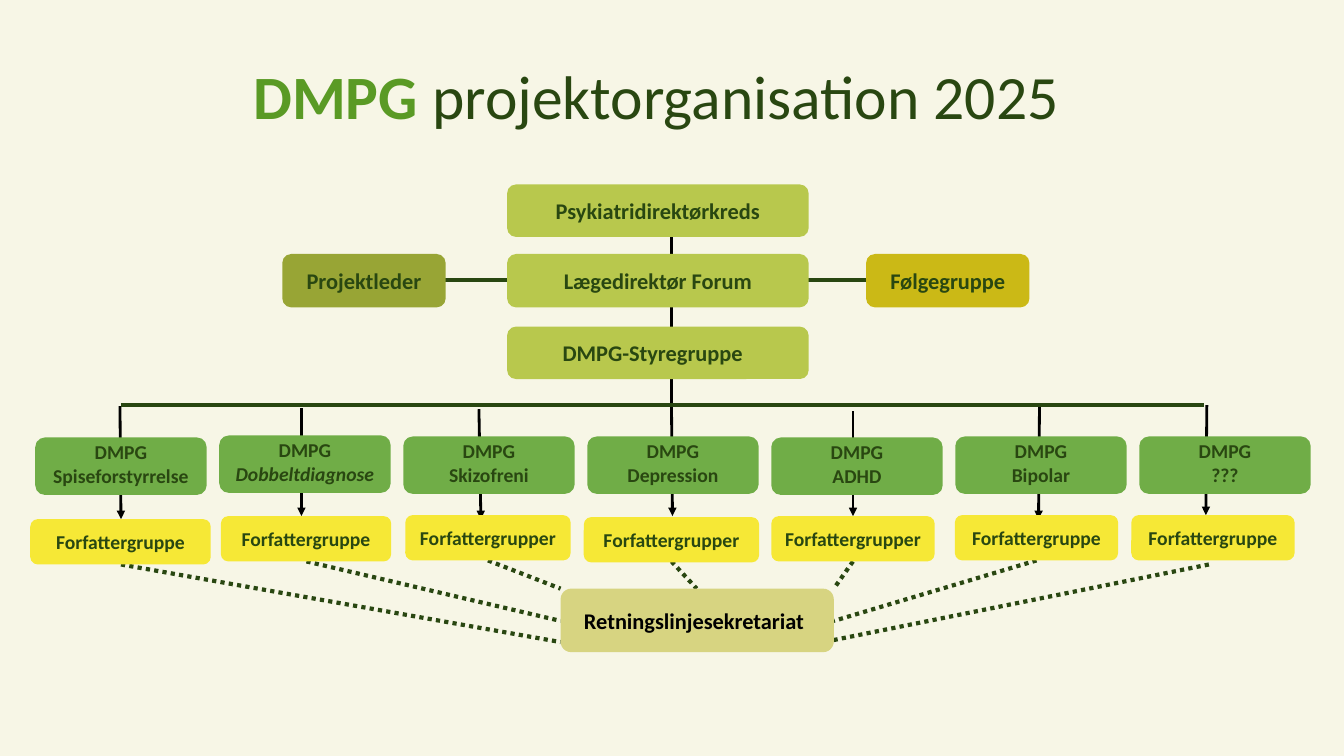
from collections import namedtuple

from lxml.etree import SubElement
from pptx import Presentation
from pptx.dml.color import RGBColor
from pptx.enum.shapes import MSO_CONNECTOR, MSO_SHAPE
from pptx.enum.text import MSO_ANCHOR, PP_ALIGN
from pptx.oxml.ns import qn
from pptx.util import Inches, Pt

COLORS = {
    "background": "F7F6E6",
    "dark": "294711",
    "black": "000000",
    "title": "5A9A25",
    "board": "B8C84D",
    "leader": "98A535",
    "followers": "CBB916",
    "branch": "70AD47",
    "authors": "F6E836",
    "secretariat": "D7D481",
}

Branch = namedtuple("Branch", "name top authors authors_box arrow dots")
BRANCHES = [
    Branch("Spiseforstyrrelse", 4.34, "Forfattergruppe", (0.3, 5.15, 1.79, 0.45),
           (1.19, 4.03, 1.2, 5.15), (1.2, 5.6, 5.56, 6.37)),
    Branch("Dobbeltdiagnose", 4.32, "Forfattergruppe", (2.19, 5.12, 1.69, 0.45),
           (2.99, 4.05, 2.99, 5.12), (3.04, 5.57, 5.56, 6.16)),
    Branch("Skizofreni", 4.33, "Forfattergrupper", (4.02, 5.11, 1.64, 0.45),
           (4.75, 4.06, 4.77, 5.15), (4.84, 5.56, 5.56, 5.84)),
    Branch("Depression", 4.33, "Forfattergrupper", (5.79, 5.13, 1.74, 0.45),
           (6.66, 4.02, 6.67, 5.12), (6.66, 5.57, 6.91, 5.84)),
    Branch("ADHD", 4.34, "Forfattergrupper", (7.65, 5.12, 1.62, 0.45),
           (8.46, 4.08, 8.46, 5.12), (8.46, 5.57, 8.27, 5.84)),
    Branch("Bipolar", 4.33, "Forfattergruppe", (9.47, 5.11, 1.62, 0.45),
           (10.31, 4.03, 10.3, 5.15), (10.28, 5.56, 8.27, 6.16)),
    Branch("???", 4.33, "Forfattergruppe", (11.22, 5.11, 1.62, 0.45),
           (11.97, 4.02, 11.96, 5.11), (11.99, 5.6, 8.17, 6.37)),
]
BRANCH_LEFT, BRANCH_STEP = 0.35, 1.825


def color(name):
    return RGBColor.from_string(COLORS[name])


def add_run(paragraph, text, size, color_name, bold=True, italic=False):
    run = paragraph.add_run()
    run.text = text
    formats = {"name": "Calibri", "size": Pt(size), "bold": bold, "italic": italic}
    for attribute, value in formats.items():
        setattr(run.font, attribute, value)
    run.font.color.rgb = color(color_name)


def set_frame(frame, left=0.1, top=0.05, right=0.1, bottom=0.05):
    formats = {
        "word_wrap": True,
        "vertical_anchor": MSO_ANCHOR.MIDDLE,
        "margin_left": Inches(left),
        "margin_top": Inches(top),
        "margin_right": Inches(right),
        "margin_bottom": Inches(bottom),
    }
    for attribute, value in formats.items():
        setattr(frame, attribute, value)


def add_title(slide):
    box = slide.shapes.add_textbox(*map(Inches, (0.76, 0.57, 11.5, 0.84)))
    set_frame(box.text_frame)
    paragraph = box.text_frame.paragraphs[0]
    paragraph.alignment = PP_ALIGN.CENTER
    paragraph.line_spacing = 0.9
    add_run(paragraph, "DMPG", 44, "title")
    add_run(paragraph, " projektorganisation 2025", 44, "dark", bold=False)


def add_box(slide, place, fill, lines, size=16, text_color="dark",
            italic_line=None, **margins):
    """Add a rounded box with one centred paragraph for each of the lines."""
    shape = slide.shapes.add_shape(MSO_SHAPE.ROUNDED_RECTANGLE, *map(Inches, place))
    shape.shadow.inherit = False
    shape.fill.solid()
    shape.fill.fore_color.rgb = color(fill)
    shape.line.fill.background()
    frame = shape.text_frame
    set_frame(frame, **margins)
    for index, line in enumerate(lines):
        paragraph = frame.add_paragraph() if index else frame.paragraphs[0]
        paragraph.alignment = PP_ALIGN.CENTER
        add_run(paragraph, line, size, text_color, italic=line == italic_line)


def add_line(slide, ends, color_name="dark", width=3, dotted=False, arrow=False):
    connector = slide.shapes.add_connector(MSO_CONNECTOR.STRAIGHT, *map(Inches, ends))
    connector.line.color.rgb = color(color_name)
    connector.line.width = Pt(width)
    outline = connector.line._get_or_add_ln()
    if dotted:
        SubElement(outline, qn("a:prstDash"), val="sysDot")
    if arrow:
        SubElement(outline, qn("a:tailEnd"), type="triangle")
    SubElement(connector._element.spPr, qn("a:effectLst"))


def add_lines(slide):
    add_line(slide, (6.66, 2.21, 6.66, 4.06), "black", 2)
    for branch in BRANCHES:
        add_line(slide, branch.arrow, "black", 2, arrow=True)
        add_line(slide, branch.dots, dotted=True)
    add_line(slide, (4, 2.78, 8.92, 2.78))
    add_line(slide, (1.2, 4.02, 11.94, 4.02))


def add_management(slide):
    add_box(slide, (5.03, 1.83, 2.99, 0.52), "board", ["Psykiatridirektørkreds"])
    add_box(slide, (5.03, 2.52, 2.99, 0.53), "board", ["Lægedirektør Forum"])
    add_box(slide, (5.03, 3.24, 2.99, 0.52), "board", ["DMPG-Styregruppe"], right=0.2)
    add_box(slide, (2.8, 2.52, 1.62, 0.53), "leader", ["Projektleder"])
    add_box(slide, (8.59, 2.52, 1.62, 0.53), "followers", ["Følgegruppe"])


def add_branches(slide):
    for index, branch in enumerate(BRANCHES):
        place = (BRANCH_LEFT + index * BRANCH_STEP, branch.top, 1.7, 0.57)
        add_box(slide, place, "branch", ["DMPG", branch.name], 14,
                italic_line="Dobbeltdiagnose", top=0)
        add_box(slide, branch.authors_box, "authors", [branch.authors], 14)


def main():
    presentation = Presentation()
    presentation.slide_width = Inches(13.33)
    presentation.slide_height = Inches(7.5)
    slide = presentation.slides.add_slide(presentation.slide_layouts[6])
    slide.background.fill.solid()
    slide.background.fill.fore_color.rgb = color("background")
    add_title(slide)
    add_lines(slide)
    add_management(slide)
    add_branches(slide)
    add_box(slide, (5.56, 5.84, 2.71, 0.63), "secretariat",
            ["Retningslinjesekretariat"], text_color="black", right=0.16)
    presentation.save("out.pptx")


if __name__ == "__main__":
    main()
